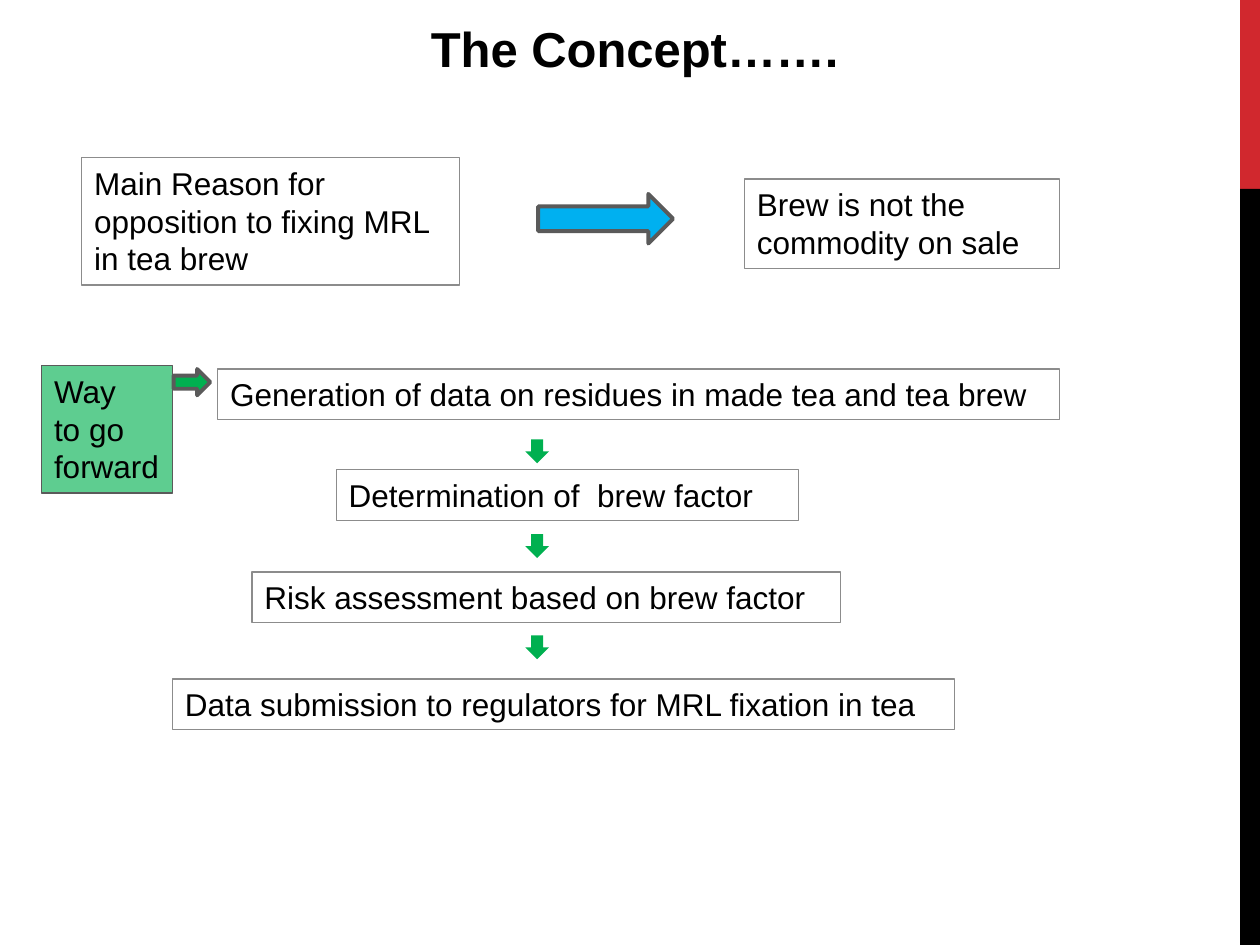
from dataclasses import dataclass

from lxml.etree import SubElement
from pptx import Presentation
from pptx.dml.color import RGBColor
from pptx.enum.shapes import MSO_SHAPE
from pptx.enum.text import MSO_ANCHOR, PP_ALIGN
from pptx.oxml.ns import qn
from pptx.util import Cm, Pt


@dataclass(frozen=True)
class Theme:
    font: str = "Arial"
    title_size: int = 28
    body_size: int = 18
    text: str = "000000"
    red: str = "D1282E"
    black: str = "000000"
    box_line: str = "8C8C8C"
    dark_line: str = "5A5A5A"
    blue: str = "00B0F0"
    green: str = "00B050"


theme = Theme()


def add_figure(preset, bounds, fill=None, line=None, width=0.75):
    figure = slide.shapes.add_shape(preset, *(Cm(length) for length in bounds))
    figure.shadow.inherit = False
    if fill:
        figure.fill.solid()
        figure.fill.fore_color.rgb = RGBColor.from_string(fill)
    else:
        figure.fill.background()
    if line:
        figure.line.color.rgb = RGBColor.from_string(line)
        figure.line.width = Pt(width)
    else:
        figure.line.fill.background()
    return figure


def write_text(holder, text, size, bold=False, wrap=True):
    frame = holder.text_frame
    frame.text = text
    frame.word_wrap = wrap
    frame.vertical_anchor = MSO_ANCHOR.TOP
    for paragraph in frame.paragraphs:
        paragraph.alignment = PP_ALIGN.LEFT
        for run in paragraph.runs:
            run.font.name = theme.font
            run.font.size = Pt(size)
            run.font.bold = bold
            run.font.color.rgb = RGBColor.from_string(theme.text)


prs = Presentation()
prs.slide_width, prs.slide_height = Cm(25.4), Cm(19.05)
slide = prs.slides.add_slide(prs.slide_layouts[5])

for top, height, color in ((0, 3.81, theme.red), (3.81, 15.24, theme.black)):
    add_figure(MSO_SHAPE.RECTANGLE, (25, top, 0.4, height), color)

heading = slide.shapes.title
heading.left, heading.top, heading.width, heading.height = Cm(8.43), Cm(0.25), Cm(8.84), Cm(1.45)
write_text(heading, "The Concept…….", theme.title_size, bold=True, wrap=False)

statements = (
    ("Main Reason for opposition to fixing MRL in tea brew", (1.65, 3.18, 7.62, 2.57)),
    ("Brew is not the commodity on sale", (15.01, 3.61, 6.35, 1.8)),
    ("Generation of data on residues in made tea and tea brew", (4.39, 7.44, 16.97, 1.02)),
    ("Determination of  brew factor", (6.78, 9.47, 9.32, 1.02)),
    ("Risk assessment based on brew factor", (5.08, 11.53, 11.86, 1.02)),
    ("Data submission to regulators for MRL fixation in tea", (3.48, 13.69, 15.77, 1.02)),
)
for text, bounds in statements:
    statement = add_figure(MSO_SHAPE.RECTANGLE, bounds, line=theme.box_line)
    write_text(statement, text, theme.body_size)

add_figure(MSO_SHAPE.RIGHT_ARROW, (10.85, 3.91, 2.72, 1), theme.blue, theme.dark_line, 2.25)

for top in (8.86, 10.77, 12.81):
    add_figure(MSO_SHAPE.DOWN_ARROW, (10.59, top, 0.48, 0.48), theme.green)

way_forward = add_figure(
    MSO_SHAPE.RECTANGLE, (0.84, 7.37, 2.64, 2.57), theme.green, theme.dark_line
)
fill_color = way_forward.fill._xPr.find(qn("a:solidFill")).find(qn("a:srgbClr"))
SubElement(fill_color, qn("a:alpha"), val="63000")
write_text(way_forward, "Way\nto go\nforward", theme.body_size, wrap=False)

add_figure(MSO_SHAPE.RIGHT_ARROW, (3.5, 7.44, 0.74, 0.53), theme.green, theme.dark_line, 2.25)

prs.save("out.pptx")
